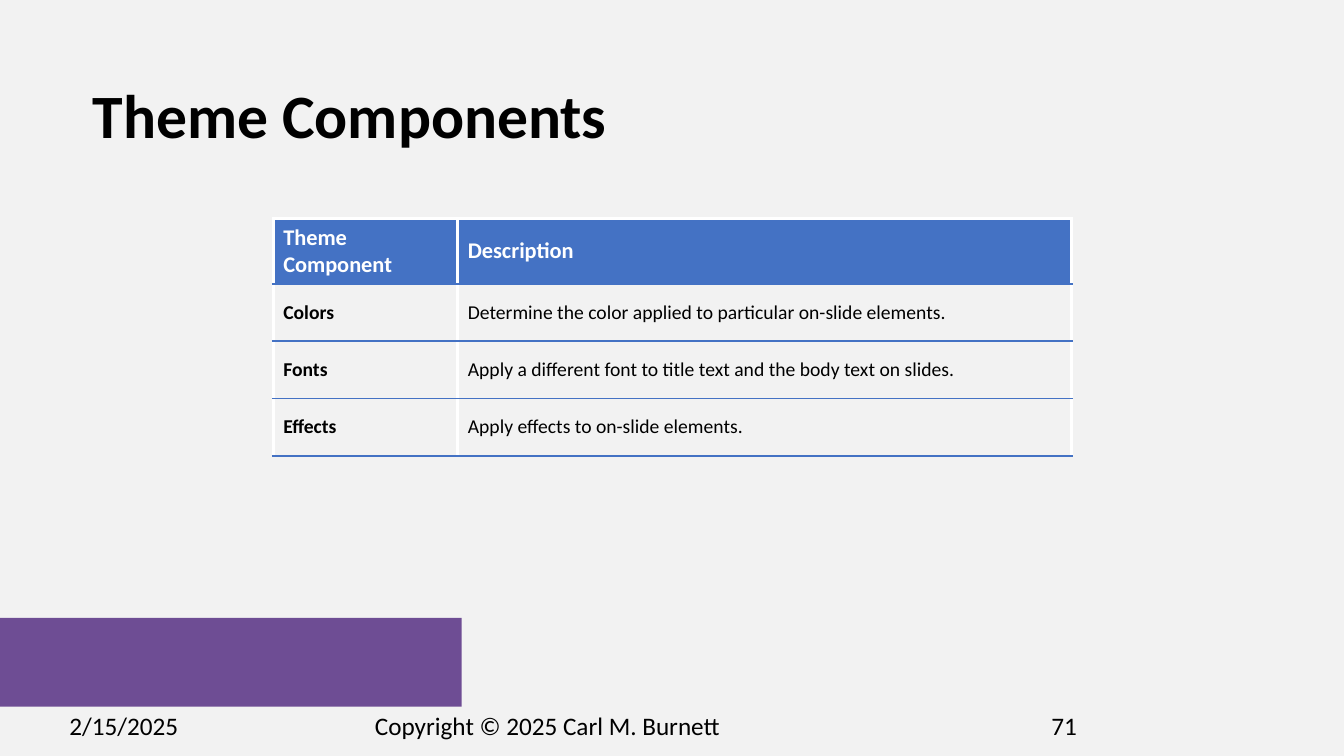
from dataclasses import dataclass

from lxml import etree
from pptx import Presentation
from pptx.dml.color import RGBColor
from pptx.enum.shapes import MSO_SHAPE
from pptx.enum.text import MSO_ANCHOR, PP_ALIGN
from pptx.oxml.ns import qn
from pptx.util import Inches, Pt

RECT = MSO_SHAPE.RECTANGLE
MIDDLE = MSO_ANCHOR.MIDDLE
LEFT = PP_ALIGN.LEFT


@dataclass(frozen=True)
class Theme:
    font: str = "Calibri"
    background: str = "F2F2F2"
    band: str = "6E4D94"
    accent: str = "4472C4"
    light: str = "FFFFFF"
    dark: str = "000000"
    title: int = 44
    footer: int = 18
    header: int = 16
    body: int = 14
    grid: float = 2.25
    rule: float = 1.5


THEME = Theme()

COMPONENTS = [
    ("Theme Component", "Description"),
    ("Colors", "Determine the color applied to particular on-slide elements."),
    ("Fonts", "Apply a different font to title text and the body text on slides."),
    ("Effects", "Apply effects to on-slide elements."),
]
FOOTERS = [
    ("2/15/2025", 0.59, 2.41),
    ("Copyright © 2025 Carl M. Burnett", 3.62, 6.1),
    ("71", 10.33, 2.41),
]


def inches(*lengths):
    return [Inches(length) for length in lengths]


def write(tf, text, size, color, bold=False):
    frame = {
        "word_wrap": True,
        "vertical_anchor": MIDDLE,
        "margin_left": Inches(0.1),
        "margin_right": Inches(0.1),
        "margin_top": Inches(0.05),
        "margin_bottom": Inches(0.05),
    }
    for name, value in frame.items():
        setattr(tf, name, value)
    p = tf.paragraphs[0]
    p.alignment = LEFT
    r = p.add_run()
    r.text = text
    for name, value in {"name": THEME.font, "size": Pt(size), "bold": bold}.items():
        setattr(r.font, name, value)
    r.font.color.rgb = RGBColor.from_string(color)
    return p


def set_border(cell, side, color, width):
    tc_pr = cell._tc.get_or_add_tcPr()
    ln = etree.SubElement(tc_pr, qn(f"a:ln{side}"), w=str(Pt(width)))
    fill = etree.SubElement(ln, qn("a:solidFill"))
    etree.SubElement(fill, qn("a:srgbClr"), val=color)


def add_band(s, left, top, width, height):
    sp = s.shapes.add_shape(RECT, *inches(left, top, width, height))
    sp.shadow.inherit = False
    sp.fill.solid()
    sp.fill.fore_color.rgb = RGBColor.from_string(THEME.band)
    sp.line.fill.background()


def add_title(s, text, left, top, width, height):
    sp = s.shapes.title
    sp.left, sp.top, sp.width, sp.height = inches(left, top, width, height)
    p = write(sp.text_frame, text, THEME.title, THEME.dark, True)
    p.line_spacing = 0.9


def add_components(s, left, top, width, height):
    label_width, header_height = 1.83, 0.64
    row_height = (height - header_height) / (len(COMPONENTS) - 1)
    table = s.shapes.add_table(
        len(COMPONENTS), 2, *inches(left, top, width, height)
    ).table
    table.first_row = table.horz_banding = False
    for column, size in zip(table.columns, (label_width, width - label_width)):
        column.width = Inches(size)
    for i, texts in enumerate(COMPONENTS):
        is_header = i == 0
        table.rows[i].height = Inches(header_height if is_header else row_height)
        edge = (THEME.light, THEME.grid)
        rule = (THEME.accent, THEME.rule)
        borders = {"L": edge, "R": edge, "T": edge if is_header else rule, "B": rule}
        for j, text in enumerate(texts):
            cell = table.cell(i, j)
            for side, line in borders.items():
                set_border(cell, side, *line)
            cell.fill.solid()
            fill = THEME.accent if is_header else THEME.background
            cell.fill.fore_color.rgb = RGBColor.from_string(fill)
            cell.vertical_anchor = MIDDLE
            write(
                cell.text_frame,
                text,
                THEME.header if is_header else THEME.body,
                THEME.light if is_header else THEME.dark,
                is_header or j == 0,
            )


def add_footer(s, top, height):
    for text, left, width in FOOTERS:
        sp = s.shapes.add_textbox(*inches(left, top, width, height))
        write(sp.text_frame, text, THEME.footer, THEME.dark)


def main():
    prs = Presentation()
    prs.slide_width, prs.slide_height = inches(13.33, 7.5)
    s = prs.slides.add_slide(prs.slide_layouts.get_by_name("Title Only"))
    s.background.fill.solid()
    s.background.fill.fore_color.rgb = RGBColor.from_string(THEME.background)
    add_band(s, 0, 6.13, 4.58, 0.88)
    add_title(s, "Theme Components", 0.82, 0.75, 11.2, 0.86)
    add_components(s, 2.71, 2.17, 7.92, 2.35)
    add_footer(s, 7, 0.4)
    prs.save("out.pptx")


if __name__ == "__main__":
    main()
